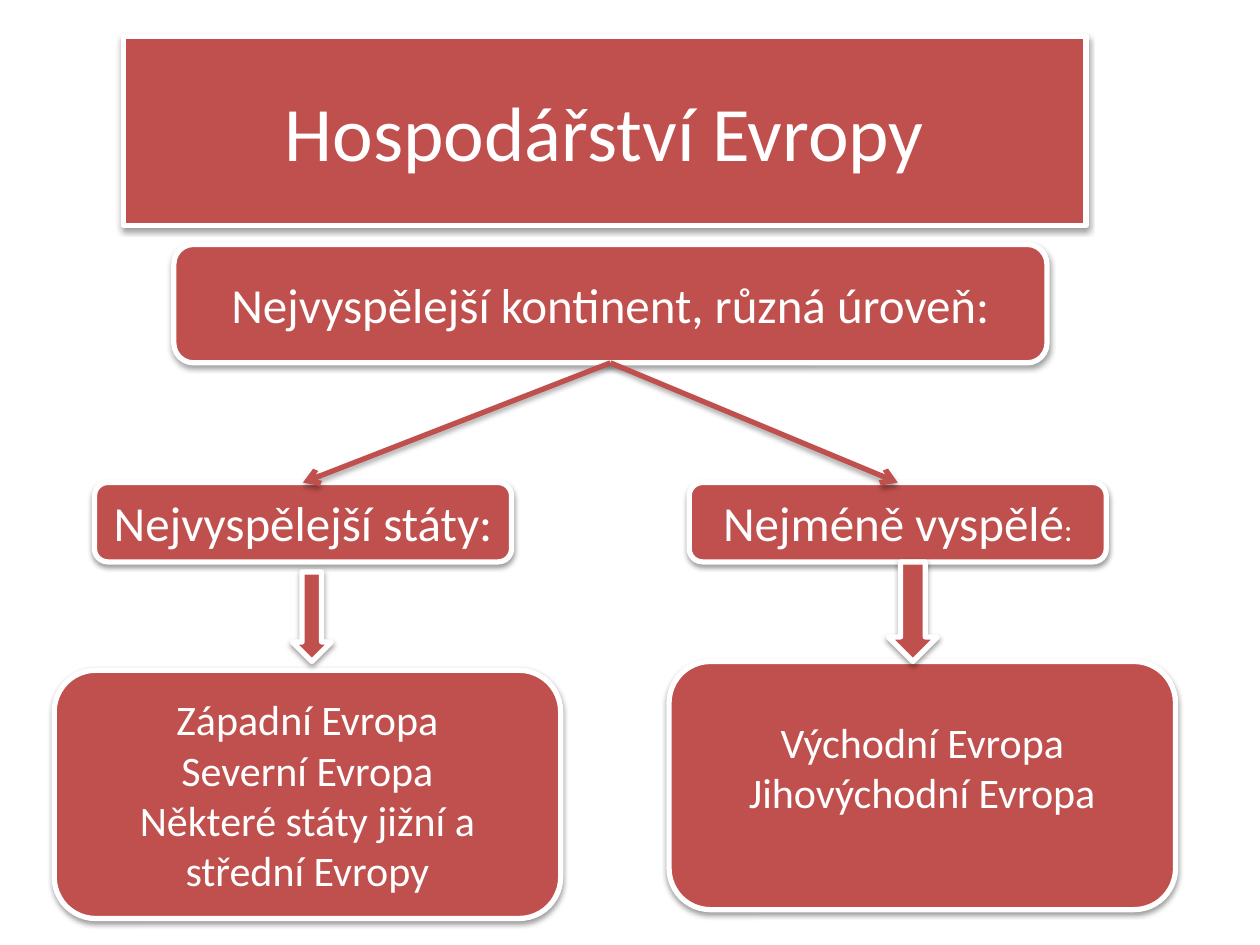
from dataclasses import dataclass

from lxml import etree
from pptx import Presentation
from pptx.dml.color import RGBColor
from pptx.enum.shapes import MSO_CONNECTOR, MSO_SHAPE
from pptx.enum.text import MSO_ANCHOR, MSO_AUTO_SIZE, PP_ALIGN
from pptx.oxml.ns import qn
from pptx.util import Inches, Pt

ROUND = MSO_SHAPE.ROUNDED_RECTANGLE
DOWN = MSO_SHAPE.DOWN_ARROW
STRAIGHT = MSO_CONNECTOR.STRAIGHT
MIDDLE = MSO_ANCHOR.MIDDLE
CENTER = PP_ALIGN.CENTER
NO_FIT = MSO_AUTO_SIZE.NONE
TITLE_ONLY = 5
TOP, BOTTOM = 0, 2
COLS, ROWS = 100, 75


@dataclass(frozen=True)
class Theme:
    red: RGBColor = RGBColor(0xC0, 0x50, 0x4D)
    white: RGBColor = RGBColor(0xFF, 0xFF, 0xFF)
    shade: str = "000000"
    font: str = "Calibri"
    title: int = 44
    head: int = 28
    body: int = 24
    small: int = 18
    line: int = 3


@dataclass(frozen=True)
class Area:
    col: float
    row: float
    wide: float
    high: float


@dataclass(frozen=True)
class Branch:
    head: str
    mark: str
    items: tuple[str, ...]
    head_at: Area
    list_at: Area
    arrow_at: Area
    foot: float


THEME = Theme()
WIDTH, HEIGHT = Inches(10), Inches(7.5)

BRANCHES = (
    Branch("Nejvyspělejší státy:", "",
           ("Západní Evropa", "Severní Evropa",
            "Některé státy jižní a střední Evropy"),
           Area(7.5, 38.3, 33.1, 6.3), Area(4.3, 53.2, 40.2, 19.7),
           Area(23.2, 45.4, 3.1, 7.1), 0.05),
    Branch("Nejméně vyspělé", ":",
           ("Východní Evropa", "Jihovýchodní Evropa"),
           Area(54.7, 38.3, 33.1, 6.3), Area(53.1, 52.5, 40.2, 19.7),
           Area(70.5, 44.6, 3.9, 7.9), 0.35),
)


def place(area: Area) -> tuple[int, int, int, int]:
    return (round(WIDTH * area.col / COLS), round(HEIGHT * area.row / ROWS),
            round(WIDTH * area.wide / COLS), round(HEIGHT * area.high / ROWS))


def shade(item, gap: int, alpha: int) -> None:
    props = item._element.spPr
    list_tag = qn("a:effectLst")
    effects = props.find(list_tag)
    if effects is None:
        effects = etree.SubElement(props, list_tag)
    cast = etree.SubElement(effects, qn("a:outerShdw"), blurRad="40000",
                            dist=str(gap), dir="5400000", rotWithShape="0")
    color = etree.SubElement(cast, qn("a:srgbClr"), val=THEME.shade)
    etree.SubElement(color, qn("a:alpha"), val=str(alpha * 1000))


def paint(shape) -> None:
    shape.fill.solid()
    shape.fill.fore_color.rgb = THEME.red
    shape.line.color.rgb = THEME.white
    shape.line.width = Pt(THEME.line)
    shape.shadow.inherit = False
    shade(shape, 20000, 38)


def write(shape, lines: tuple[str, ...], size: int) -> None:
    frame = shape.text_frame
    frame.word_wrap = True
    frame.auto_size = NO_FIT
    frame.vertical_anchor = MIDDLE
    frame.text = "\n".join(lines)
    for para in frame.paragraphs:
        para.alignment = CENTER
        para.font.name = THEME.font
        para.font.size = Pt(size)
        para.font.color.rgb = THEME.white


def add_box(slide, area: Area, lines: tuple[str, ...], size: int):
    box = slide.shapes.add_shape(ROUND, *place(area))
    paint(box)
    write(box, lines, size)
    return box


def set_title(slide, area: Area, text: str) -> None:
    title = slide.shapes.title
    title.left, title.top, title.width, title.height = place(area)
    form = etree.SubElement(title._element.spPr, qn("a:prstGeom"),
                            prst="roundRect")
    etree.SubElement(form, qn("a:avLst"))
    paint(title)
    write(title, (text,), THEME.title)


def add_link(slide, start, end) -> None:
    link = slide.shapes.add_connector(STRAIGHT, 0, 0, 0, 0)
    link.begin_connect(start, BOTTOM)
    link.end_connect(end, TOP)
    link.line.color.rgb = THEME.red
    link.line.width = Pt(THEME.line)
    etree.SubElement(link.line._get_or_add_ln(), qn("a:tailEnd"), type="arrow")
    shade(link, 23000, 35)


def add_head(slide, branch: Branch):
    head = add_box(slide, branch.head_at, (branch.head,), THEME.head)
    if branch.mark:
        para = head.text_frame.paragraphs[0]
        run = para.add_run()
        run.text = branch.mark
        run.font.size = Pt(THEME.small)
        run.font.name = THEME.font
        run.font.color.rgb = THEME.white
    return head


def main() -> None:
    deck = Presentation()
    deck.slide_width, deck.slide_height = WIDTH, HEIGHT
    slide = deck.slides.add_slide(deck.slide_layouts[TITLE_ONLY])

    set_title(slide, Area(9.8, 2.9, 76.4, 15), "Hospodářství Evropy")
    root = add_box(slide, Area(13.8, 19.4, 69.3, 9.4),
                   ("Nejvyspělejší kontinent, různá úroveň:",), THEME.head)
    heads = [add_head(slide, branch) for branch in BRANCHES]
    for branch in BRANCHES:
        box = add_box(slide, branch.list_at, branch.items, THEME.body)
        box.text_frame.margin_bottom = Inches(branch.foot)
    for head in heads:
        add_link(slide, root, head)
    for branch in BRANCHES:
        paint(slide.shapes.add_shape(DOWN, *place(branch.arrow_at)))

    deck.save("out.pptx")


if __name__ == "__main__":
    main()
